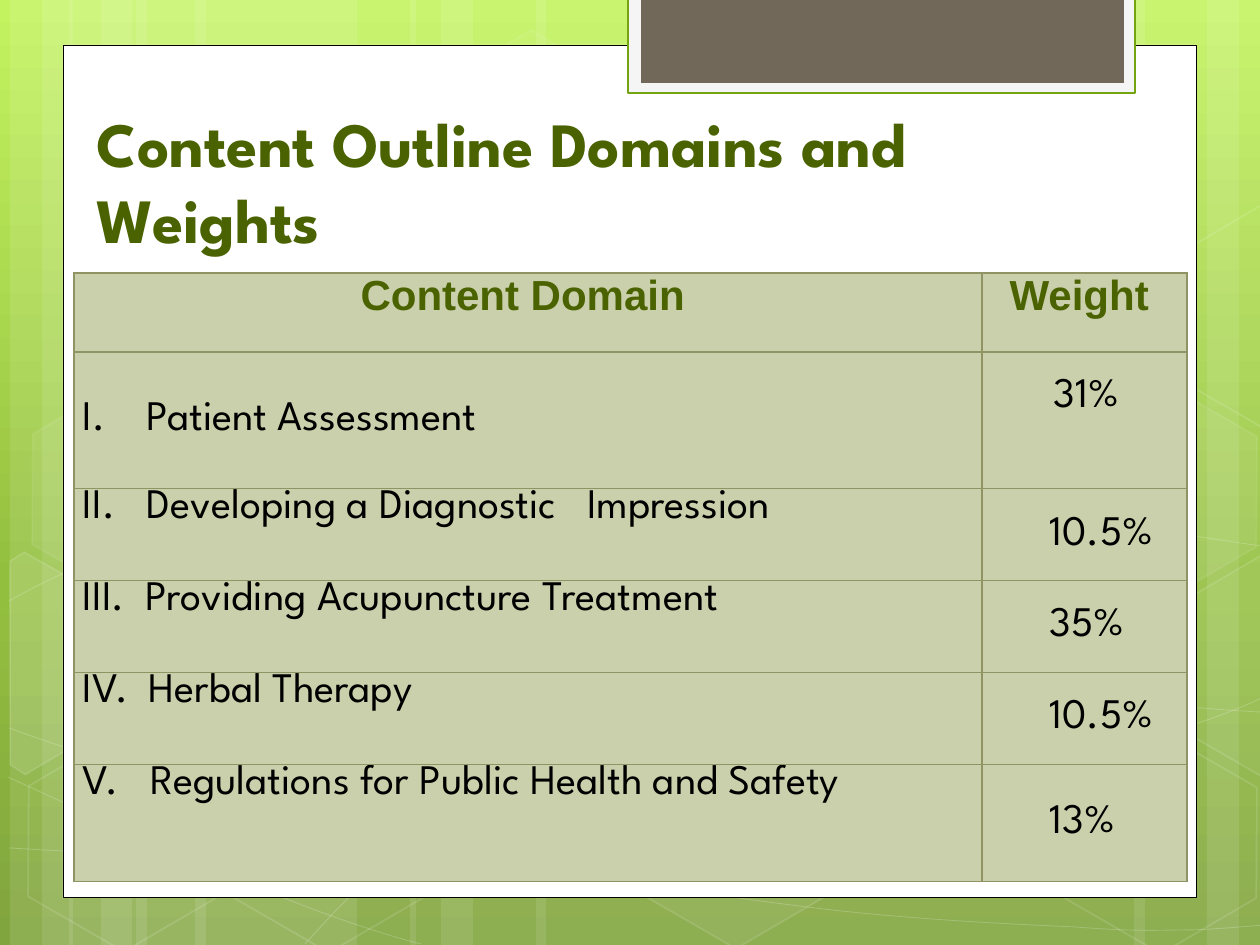
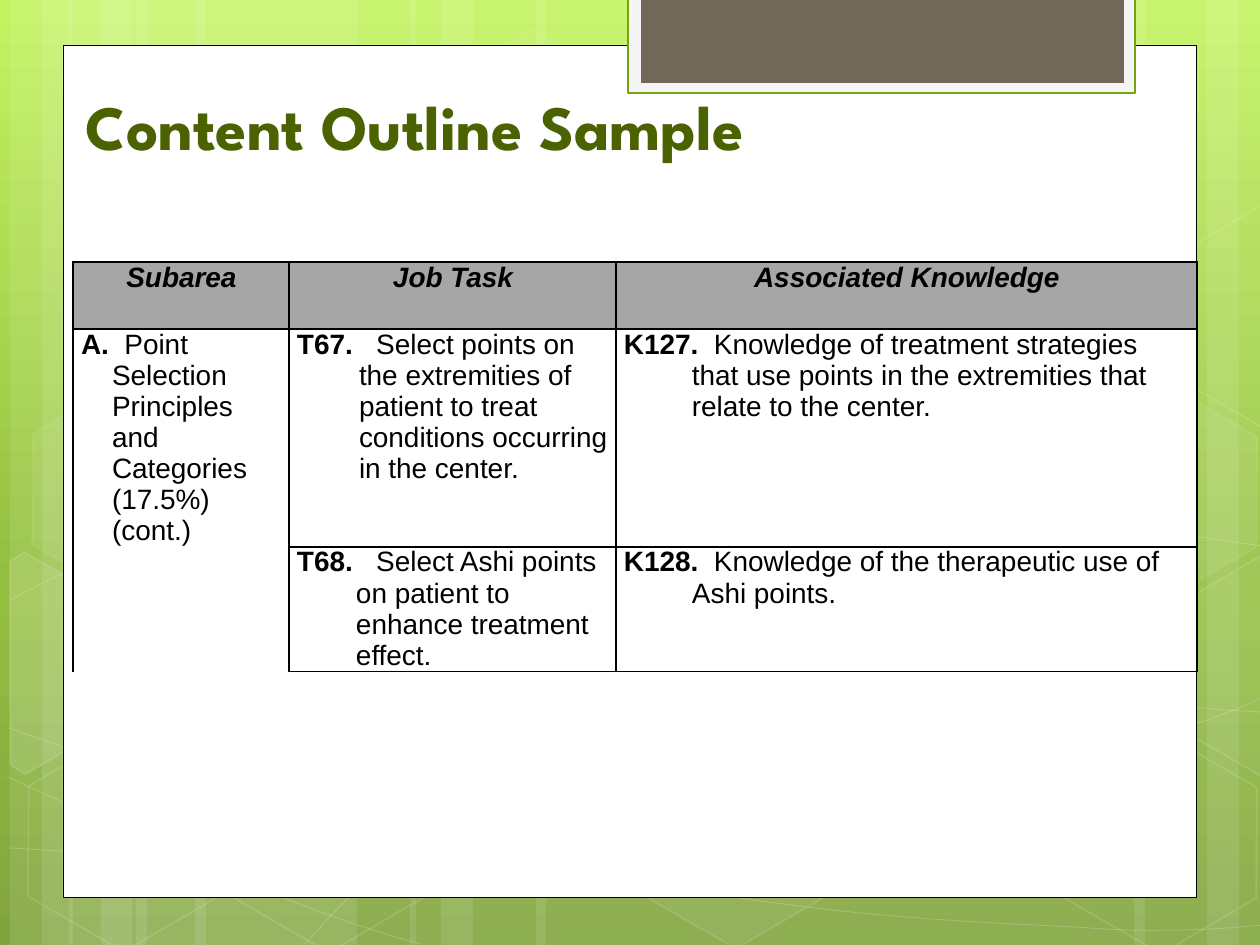
from dataclasses import dataclass
from math import cos, radians, sin

from lxml import etree
from pptx import Presentation
from pptx.dml.color import RGBColor
from pptx.enum.shapes import MSO_SHAPE
from pptx.enum.text import MSO_ANCHOR, MSO_AUTO_SIZE, PP_ALIGN
from pptx.oxml.ns import qn
from pptx.util import Pt

RECT, HEX = MSO_SHAPE.RECTANGLE, MSO_SHAPE.HEXAGON
TOP, MID, LOW = MSO_ANCHOR.TOP, MSO_ANCHOR.MIDDLE, MSO_ANCHOR.BOTTOM
LEFT, CENTER = PP_ALIGN.LEFT, PP_ALIGN.CENTER
FIXED = MSO_AUTO_SIZE.NONE
SCALE = 914400 / 126
WIDE, HIGH = 1260, 945
TILT = 30


@dataclass(frozen=True)
class Theme:
    white: str = "FFFFFF"
    black: str = "000000"
    green: str = "4A6300"
    trim: str = "74A510"
    pale: str = "F5F5F5"
    brown: str = "71685A"
    sage: str = "CAD0AB"
    olive: str = "909465"
    gray: str = "A6A6A6"
    sky: tuple = ((0, "C3F35F"), (62, "93BF3F"), (100, "81A53E"))
    head: str = "League Spartan"
    body: str = "Arial"
    title: int = 36
    large: int = 24
    small: int = 16


T = Theme()

# Text parts: a string is a run, a number is a space widened by that many points.
WEIGHTS = {
    "title": "Content Outline Domains and Weights",
    "head": ("Content Domain ", "Weight "),
    # parts, hanging indent, share
    "rows": [
        (["I.\tPatient Assessment"], 64, "31%"),
        (["II.\tDeveloping a Diagnostic", 11.5, "Impression"], 64, "10.5%"),
        (["III.\tProviding Acupuncture Treatment"], 63, "35%"),
        (["IV.\tHerbal Therapy"], 66, "10.5%"),
        (["V.\tRegulations for Public Health and Safety"], 67, "13%"),
    ],
}
SAMPLE = {
    "title": "Content Outline Sample",
    "head": ("Subarea", "Job Task", "Associated Knowledge"),
    # label, gap, text, hanging indent
    "rows": [
        (("A.", 4.45, "Point Selection Principles and Categories (17.5%) (cont.)", 31),
         ("T67.", 8.9, "Select points on the extremities of patient to treat "
          "conditions occurring in the center.", 62),
         ("K127.", 4.45, "Knowledge of treatment strategies that use points in "
          "the extremities that relate to the center.", 68)),
        (None,
         ("T68.", 8.9, "Select Ashi points on patient to enhance treatment effect.", 59),
         ("K128.", 4.45, "Knowledge of the therapeutic use of Ashi points.", 68)),
    ],
}

# left, width
BANDS = [(136, 221), (10, 63), (42, 105), (195, 221), (69, 63), (101, 105),
         (924, 221), (1207, 63), (1134, 105), (536, 388), (410, 63), (441, 105)]
# start point, then two control points and an end point for each piece
WAVES = [
    [(9, 848), (77, 852), (145, 856), (239, 854), (334, 853), (451, 850), (577, 838),
     (703, 825), (882, 802), (998, 777), (1113, 753), (1231, 716), (1269, 694)],
    [(9, 601), (45, 581), (82, 562), (152, 543), (224, 524), (326, 496), (437, 488),
     (549, 479), (685, 478), (824, 488), (963, 498), (1193, 537), (1269, 547)],
    [(8, 777), (160, 847), (311, 916), (421, 944)],
    [(9, 728), (48, 742), (88, 756), (161, 776), (234, 795), (344, 827), (450, 848),
     (554, 869), (687, 892), (791, 905), (896, 919), (1008, 924), (1075, 927),
     (1140, 932), (1158, 930), (1191, 930), (1223, 929), (1246, 926), (1269, 925)],
    [(305, 944), (328, 919), (350, 893), (381, 871), (411, 848), (454, 823), (489, 805),
     (524, 788), (546, 780), (592, 767), (638, 755), (722, 737), (766, 728),
     (811, 719), (818, 719), (857, 717), (896, 713), (958, 709), (1000, 708),
     (1044, 707), (1116, 708), (1116, 708), (1144, 708), (1173, 708), (1201, 708),
     (1223, 710), (1245, 711), (1256, 712), (1268, 712), (1264, 712), (1268, 713)],
]
# left, top, fill opacity, line opacity
HEXES = [(421, 45, 4, 8), (626, 742, 6, 12), (14, 745, 0, 12), (18, 393, 7, 8),
         (219, 746, 0, 12), (949, 571, 10, 12), (1051, 747, 0, 12), (1051, 396, 7, 8)]
# center, corners, fill opacity
CUTS = [
    ((45, 674), [(10, 561), (24, 552), (121, 607), (120, 718), (25, 774), (10, 765)], 10),
    ((1241, 655), [(1167, 611), (1261, 556), (1271, 562), (1271, 777), (1262, 777),
                   (1167, 722)], 4),
    ((1241, 304), [(1167, 261), (1261, 205), (1273, 212), (1271, 422), (1262, 427),
                   (1167, 372)], 0),
]


def px(num):
    return round(num * SCALE)


def rgb(code):
    return RGBColor.from_string(code)


def fade(node, part):
    for color in node.iter(qn("a:srgbClr")):
        etree.SubElement(color, qn("a:alpha")).set("val", str(part * 1000))


def paint(shape, fill=None, line=None, width=1, fill_part=100, line_part=100):
    """Set fill and line; the parts are opacities in percent."""
    shape.shadow.inherit = False
    props = shape.element.spPr
    if fill and fill_part:
        shape.fill.solid()
        shape.fill.fore_color.rgb = rgb(fill)
        if fill_part < 100:
            fade(props.find(qn("a:solidFill")), fill_part)
    else:
        shape.fill.background()
    if line:
        shape.line.color.rgb = rgb(line)
        shape.line.width = Pt(width)
        if line_part < 100:
            fade(props.find(qn("a:ln")), line_part)
    else:
        shape.line.fill.background()


def add(shapes, kind, box):
    return shapes.add_shape(kind, *map(px, box))


def trace(shapes, dots, close):
    pen = shapes.build_freeform(*dots[0], scale=SCALE)
    pen.add_line_segments(dots[1:], close=close)
    return pen.convert_to_shape()


def curve(shapes, knots):
    """Trace the knots, then join each three segments into one cubic curve."""
    wave = trace(shapes, knots, False)
    lines = list(wave.element.iter(qn("a:lnTo")))
    for i in range(0, len(lines), 3):
        bend = etree.Element(qn("a:cubicBezTo"))
        lines[i].addprevious(bend)
        for line in lines[i:i + 3]:
            bend.append(line[0])
            line.getparent().remove(line)
    return wave


def turn(dots, mid, angle):
    c, s = cos(radians(angle)), sin(radians(angle))
    a, b = mid
    return [(round(a + (x - a) * c - (y - b) * s, 2),
             round(b + (x - a) * s + (y - b) * c, 2)) for x, y in dots]


def draw_decor(shapes):
    for x, w in BANDS:
        paint(add(shapes, RECT, (x, 0, w, HIGH)), T.white, fill_part=10)
    for knots in WAVES:
        paint(curve(shapes, knots), line=T.white, width=0.5, line_part=20)
    for x, y, fill, line in HEXES:
        cell = add(shapes, HEX, (x, y, 220, 192))
        cell.adjustments[0] = 0.285
        cell.rotation = TILT
        paint(cell, T.white, T.white, 1, fill, line)
    for mid, dots, fill in CUTS:
        cut = trace(shapes, turn(dots, mid, -TILT), True)
        cut.rotation = TILT
        paint(cut, T.white, T.white, 1, fill, 12)
    paint(add(shapes, RECT, (63, 45, 1134, 853)), T.white, T.black, 0.5)
    paint(add(shapes, RECT, (628, -3, 507, 96)), T.pale, T.trim, 1.25)
    paint(add(shapes, RECT, (641, -3, 483, 86)), T.brown)


def dress(layout, slide):
    """Give the layout its background and decor, drawn by way of a slide."""
    fill = layout.background.fill
    fill.gradient()
    fill.gradient_angle = 270
    stops = next(layout.element.iter(qn("a:gsLst")))
    for stop in list(stops):
        stops.remove(stop)
    for pos, code in T.sky:
        stop = etree.SubElement(stops, qn("a:gs"), pos=str(pos * 1000))
        etree.SubElement(stop, qn("a:srgbClr"), val=code)
    held = len(slide.shapes)
    draw_decor(slide.shapes)
    for i, shape in enumerate(list(slide.shapes)[held:]):
        layout.shapes.element.insert(2 + i, shape.element)


def style(run, size, face, color, bold=False, slant=False):
    font = run.font
    font.size, font.name, font.bold, font.italic = Pt(size), face, bold, slant
    font.color.rgb = rgb(color)


def set_title(slide, text, box, anchor):
    title = slide.shapes.title
    title.left, title.top, title.width, title.height = map(px, box)
    frame = title.text_frame
    frame.text = text
    frame.word_wrap = True
    frame.auto_size = FIXED
    frame.vertical_anchor = anchor
    para = frame.paragraphs[0]
    para.alignment = LEFT
    style(para.runs[0], T.title, T.head, T.green, True)


def add_grid(slide, spot, cols, rows):
    size = (sum(cols), sum(rows))
    grid = slide.shapes.add_table(len(rows), len(cols), *map(px, spot + size)).table
    grid.first_row = grid.horz_banding = False
    for col, w in zip(grid.columns, cols):
        col.width = px(w)
    for row, h in zip(grid.rows, rows):
        row.height = px(h)
    return grid


def set_cell(cell, fill, edge, width, sides="LRTB", pad=9, anchor=TOP):
    """Format a cell; sides that are not named get no border."""
    cell.margin_left, cell.margin_right = px(pad), px(pad - 1)
    cell.margin_top = cell.margin_bottom = 0
    cell.vertical_anchor = anchor
    cell.fill.solid()
    cell.fill.fore_color.rgb = rgb(fill)
    props = cell._tc.get_or_add_tcPr()
    for i, side in enumerate("LRTB"):
        line = etree.Element(qn("a:ln" + side), w=str(Pt(width)))
        if side in sides:
            tint = etree.SubElement(line, qn("a:solidFill"))
            etree.SubElement(tint, qn("a:srgbClr"), val=edge)
        else:
            etree.SubElement(line, qn("a:noFill"))
        props.insert(i, line)


def write(cell, parts, look, align=LEFT, left=0, first=0, label=False):
    """Fill a cell with runs; label makes the first run bold."""
    para = cell.text_frame.paragraphs[0]
    para.alignment = align
    props = para._p.get_or_add_pPr()
    props.set("marL", str(px(left)))
    props.set("indent", str(px(first)))
    for i, part in enumerate(parts):
        run = para.add_run()
        run.text = part if isinstance(part, str) else " "
        style(run, *look)
        if label and i == 0:
            run.font.bold = True
        if not isinstance(part, str):
            run.font._element.set("spc", str(round(part * 100)))


def fill_weights(slide):
    set_title(slide, WEIGHTS["title"], (84, 199, 948, 63), LOW)
    grid = add_grid(slide, (74, 273), (908, 205), (79, 137, 92, 92, 92, 117))
    edge = (T.sage, T.olive, 0.75)
    for c, text in enumerate(WEIGHTS["head"]):
        set_cell(grid.cell(0, c), *edge)
        write(grid.cell(0, c), [text], (T.large, T.body, T.green, True), CENTER)
    look = (T.large, T.head, T.black)
    for r, (parts, hang, share) in enumerate(WEIGHTS["rows"], 1):
        name, value = grid.cell(r, 0), grid.cell(r, 1)
        set_cell(name, *edge, anchor=MID if r == 1 else TOP)
        write(name, parts, look, left=hang, first=-hang)
        set_cell(value, *edge, anchor=MID)
        write(value, [share], look, left=63 if r == 1 else 59)
    grid.cell(1, 1).margin_bottom = px(47)


def fill_sample(slide):
    set_title(slide, SAMPLE["title"], (73, 81, 840, 89), TOP)
    grid = add_grid(slide, (73, 262), (216, 327, 581), (67, 217, 125))
    for c, text in enumerate(SAMPLE["head"]):
        set_cell(grid.cell(0, c), T.gray, T.black, 1, pad=8)
        write(grid.cell(0, c), [text], (T.small, T.body, T.black, True, True), CENTER)
    for r, row in enumerate(SAMPLE["rows"], 1):
        for c, item in enumerate(row):
            cell = grid.cell(r, c)
            sides = "LRTB" if c else ("LRT" if r == 1 else "LR")
            set_cell(cell, T.white, T.black, 1, sides, pad=8)
            if item:
                *parts, hang = item
                write(cell, parts, (T.small, T.body, T.black),
                      left=hang, first=-hang, label=True)


def main():
    deck = Presentation()
    deck.slide_width, deck.slide_height = px(WIDE), px(HIGH)
    layout = deck.slide_layouts[5]
    first, second = (deck.slides.add_slide(layout) for _ in range(2))
    dress(layout, first)
    fill_weights(first)
    fill_sample(second)
    deck.save("out.pptx")


if __name__ == "__main__":
    main()
